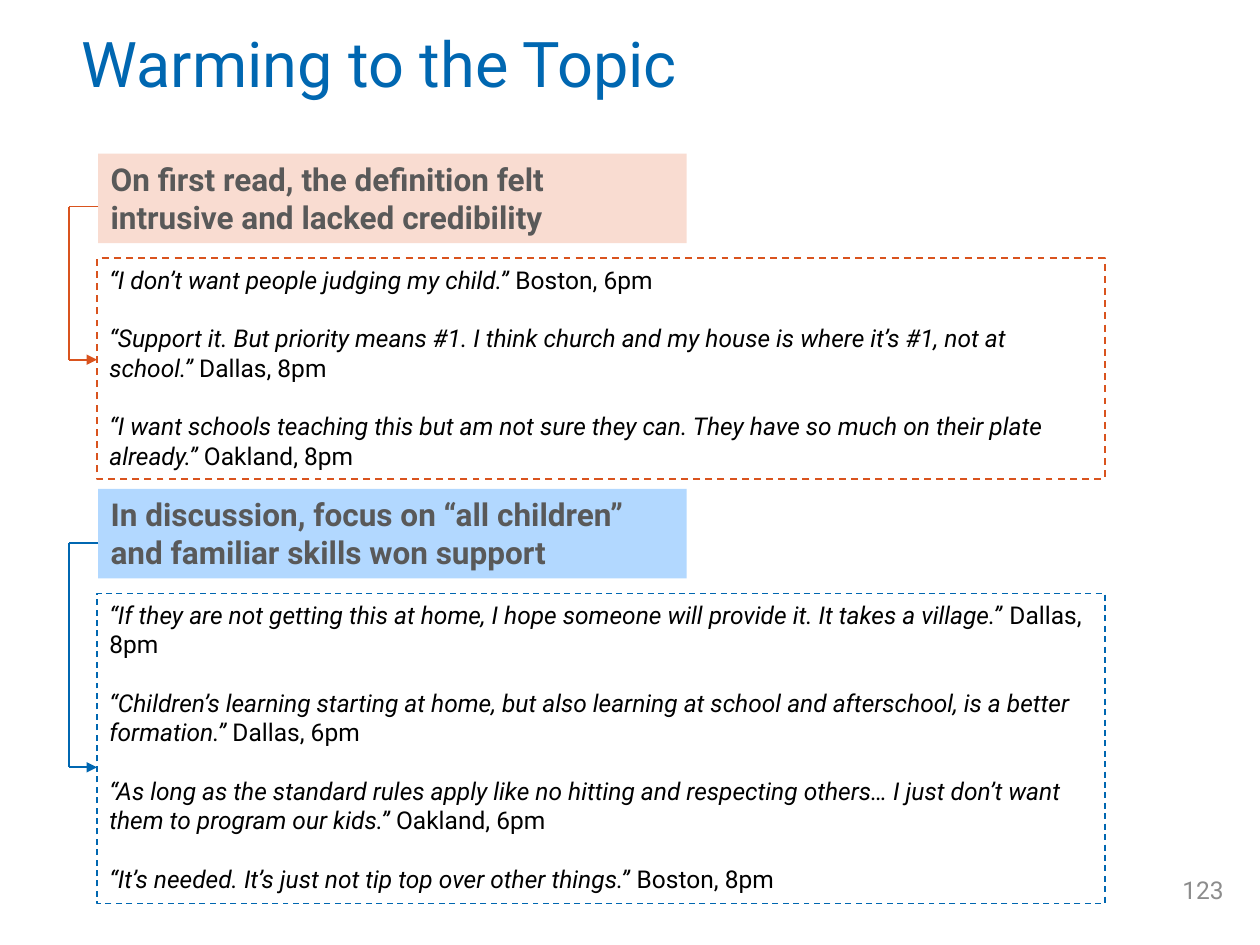
from lxml import etree
from pptx import Presentation
from pptx.dml.color import RGBColor
from pptx.enum.dml import MSO_LINE
from pptx.enum.shapes import MSO_CONNECTOR, MSO_SHAPE
from pptx.enum.text import MSO_ANCHOR, PP_ALIGN
from pptx.oxml.ns import qn
from pptx.util import Inches, Pt

RECT = MSO_SHAPE.RECTANGLE
STRAIGHT = MSO_CONNECTOR.STRAIGHT
DASH = MSO_LINE.DASH
TOP, MIDDLE = MSO_ANCHOR.TOP, MSO_ANCHOR.MIDDLE
LEFT, RIGHT = PP_ALIGN.LEFT, PP_ALIGN.RIGHT

BLUE = RGBColor(0x00, 0x67, 0xB1)
ORANGE = RGBColor(0xD9, 0x53, 0x1E)
PEACH = RGBColor(0xF9, 0xDC, 0xD1)
SKY = RGBColor(0xB2, 0xD8, 0xFF)
GRAY = RGBColor(0x59, 0x59, 0x59)
PALE = RGBColor(0x8C, 0x8C, 0x8C)
BLACK = RGBColor(0, 0, 0)
WHITE = RGBColor(255, 255, 255)

TITLE = "Warming to the Topic"
PAGE = "123"
GROUPS = [
    dict(top=1.22, height=1.75, start=1.64, tint=PEACH, color=ORANGE, weight=1,
         head="On first read, the definition felt intrusive and lacked credibility",
         quotes=[
             ("“I don’t want people judging my child.” ", "Boston, 6pm"),
             ("“Support it. But priority means #1. I think church and my house "
              "is where it’s #1, not at school.” ", "Dallas, 8pm"),
             ("“I want schools teaching this but am not sure they can. They have "
              "so much on their plate already.” ", "Oakland, 8pm"),
         ]),
    dict(top=3.88, height=2.46, start=4.31, tint=SKY, color=BLUE, weight=0.85,
         head="In discussion, focus on “all children” and familiar skills won support",
         quotes=[
             ("“If they are not getting this at home, I hope someone will provide "
              "it. It takes a village.” ", "Dallas, 8pm"),
             ("“Children’s learning starting at home, but also learning at school "
              "and afterschool, is a better formation.” ", "Dallas, 6pm"),
             ("“As long as the standard rules apply like no hitting and respecting "
              "others… I just don’t want them to program our kids.” ", "Oakland, 6pm"),
             ("“It’s needed. It’s just not tip top over other things.” ", "Boston, 8pm"),
         ]),
]

HEAD_X, QUOTE_X, RAIL_X = 0.78, 0.77, 0.55
HEAD_W, HEAD_H, QUOTE_W = 4.67, 0.71, 8
DROP = 0.83  # from the top of a heading to the top of its quotes
GAP = 16.75  # one line between quotes


def write(shape, paras, size=14, color=BLACK, bold=False, align=LEFT,
          anchor=TOP, gap=0, spacing=None):
    """Fill a shape with paragraphs, each a list of (text, italic) runs."""
    frame = shape.text_frame
    frame.word_wrap = True
    frame.vertical_anchor = anchor
    for i, runs in enumerate(paras):
        para = frame.add_paragraph() if i else frame.paragraphs[0]
        para.alignment = align
        if i and gap:
            para.space_before = Pt(gap)
        if spacing:
            para.line_spacing = spacing
        for text, slant in runs:
            run = para.add_run()
            run.text = text
            font = run.font
            font.name, font.size = "Roboto", Pt(size)
            font.bold, font.italic = bold, slant
            font.color.rgb = color


def add_label(slide, box, text, **style):
    shape = slide.shapes.add_textbox(*map(Inches, box))
    write(shape, [[(text, False)]], **style)


def add_box(slide, box, fill, line=None, weight=1):
    shape = slide.shapes.add_shape(RECT, *map(Inches, box))
    shape.shadow.inherit = False
    shape.fill.solid()
    shape.fill.fore_color.rgb = fill
    if line is None:
        shape.line.fill.background()
    else:
        shape.line.color.rgb = line
        shape.line.width = Pt(weight)
        shape.line.dash_style = DASH
    return shape


def add_path(slide, points, color):
    """Join points with lines, with an arrowhead at the last one."""
    group = slide.shapes.add_group_shape()
    for start, end in zip(points, points[1:]):
        link = group.shapes.add_connector(STRAIGHT, *map(Inches, start + end))
        link.line.color.rgb = color
        link.line.width = Pt(1)
        props = link.line._get_or_add_ln()
        etree.SubElement(props.getparent(), qn("a:effectLst"))
    etree.SubElement(props, qn("a:tailEnd"), type="triangle")


def add_group(slide, top, height, start, tint, color, weight, head, quotes):
    label = add_box(slide, (HEAD_X, top, HEAD_W, HEAD_H), tint)
    write(label, [[(head, False)]], size=18, color=GRAY, bold=True)
    low = top + DROP
    panel = add_box(slide, (QUOTE_X, low, QUOTE_W, height), WHITE, color, weight)
    write(panel, [[(quote, True), (place, False)] for quote, place in quotes], gap=GAP)
    goal = low + height / 2 - 0.07
    if color == BLUE:
        goal = low + height / 2 + 0.15
    add_path(slide, [(HEAD_X, start), (RAIL_X, start), (RAIL_X, goal),
                     (QUOTE_X, goal)], color)


def main():
    deck = Presentation()
    deck.slide_width, deck.slide_height = Inches(10), Inches(7.5)
    slide = deck.slides.add_slide(deck.slide_layouts[6])
    add_label(slide, (0.55, 0, 7.84, 1.06), TITLE, size=36, color=BLUE,
              anchor=MIDDLE, spacing=0.9)
    add_label(slide, (9.07, 6.86, 0.74, 0.4), PAGE, color=PALE,
              align=RIGHT, anchor=MIDDLE)
    for group in GROUPS:
        add_group(slide, **group)
    deck.save("out.pptx")


if __name__ == "__main__":
    main()
